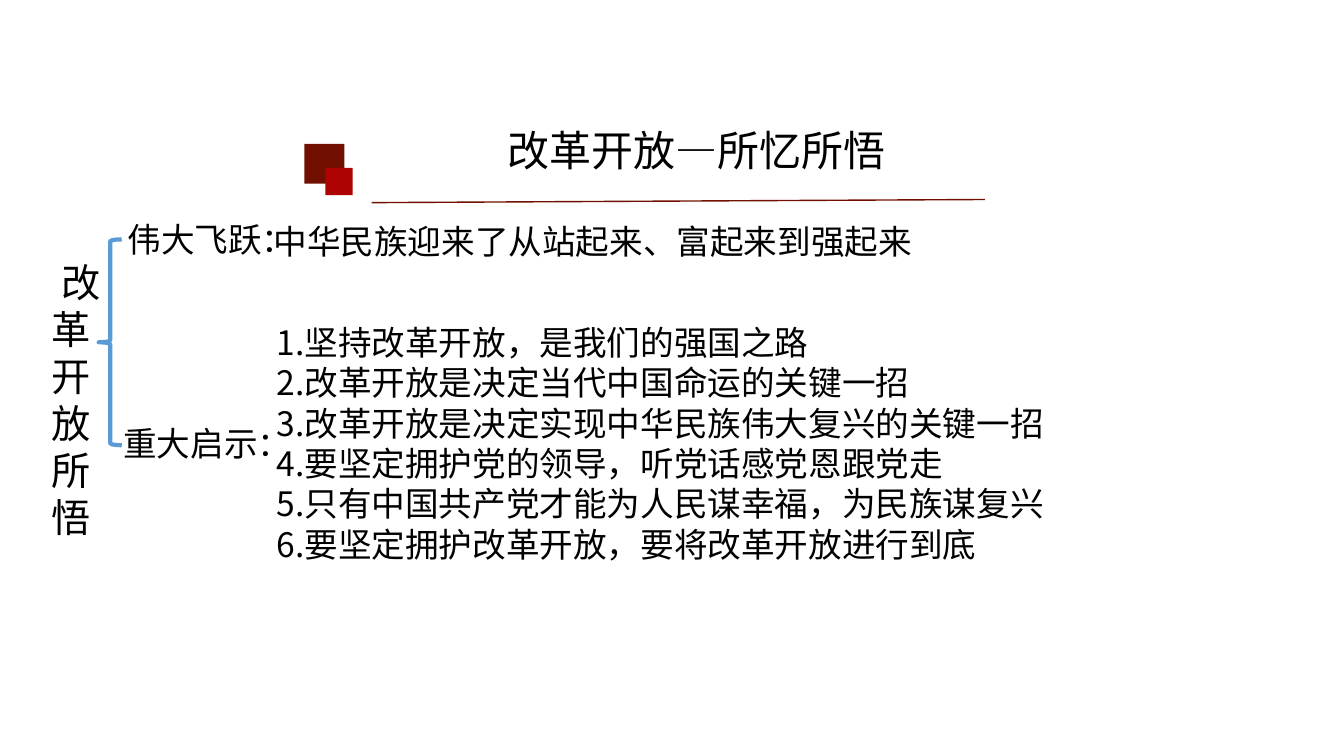
from dataclasses import dataclass

from pptx import Presentation
from pptx import util as u
from pptx.dml.color import RGBColor
from pptx.enum import shapes, text
from pptx.oxml.ns import qn

PX = 9525  # EMU per px, 96 px to the inch


@dataclass(frozen=True)
class Theme:
    font: str = "Noto Sans CJK SC"
    ink: str = "000000"
    maroon: str = "711000"
    red: str = "AE0203"
    blue: str = "5B9BD5"
    title: int = 30
    topic: int = 28
    body: int = 24
    rule: int = 1
    brace: int = 3


THEME = Theme()


def px(*lengths):
    return [u.Emu(length * PX) for length in lengths]


def add_text(slide, box, lines, size=THEME.body, align=text.PP_ALIGN.LEFT, indent=0):
    shape = slide.shapes.add_textbox(*px(*box))
    frame = shape.text_frame
    frame.word_wrap = True
    for index, line in enumerate(lines):
        paragraph = frame.paragraphs[0] if index == 0 else frame.add_paragraph()
        paragraph.alignment = align
        if indent:
            paragraph._p.get_or_add_pPr().set("indent", str(indent * PX))
        run = paragraph.add_run()
        run.text = line
        run.font.size = u.Pt(size)
        run.font.name = THEME.font
        run.font.color.rgb = RGBColor.from_string(THEME.ink)
        # East Asian glyphs take their typeface from a:ea
        east_asian = run._r.get_or_add_rPr().makeelement(
            qn("a:ea"), {"typeface": THEME.font})
        run._r.rPr.find(qn("a:latin")).addnext(east_asian)
    return shape


def add_square(slide, left, top, side, colour):
    shape = slide.shapes.add_shape(
        shapes.MSO_SHAPE.RECTANGLE, *px(left, top, side, side))
    shape.shadow.inherit = False
    shape.fill.solid()
    shape.fill.fore_color.rgb = RGBColor.from_string(colour)
    shape.line.fill.background()
    return shape


def add_brace(slide, box):
    shape = slide.shapes.add_shape(shapes.MSO_SHAPE.LEFT_BRACE, *px(*box))
    shape.shadow.inherit = False
    shape.fill.background()
    shape.line.color.rgb = RGBColor.from_string(THEME.blue)
    shape.line.width = u.Pt(THEME.brace)
    return shape


def add_rule(slide, ends):
    connector = slide.shapes.add_connector(
        shapes.MSO_CONNECTOR.STRAIGHT, *px(*ends))
    connector.line.color.rgb = RGBColor.from_string(THEME.maroon)
    connector.line.width = u.Pt(THEME.rule)
    properties = connector._element.spPr
    properties.append(properties.makeelement(qn("a:effectLst"), {}))
    return connector


def main():
    presentation = Presentation()
    presentation.slide_width, presentation.slide_height = px(1280, 720)
    slide = presentation.slides.add_slide(presentation.slide_layouts[6])

    # Heading with its ornament and rule
    add_rule(slide, (354, 193, 938, 190))
    add_square(slide, 290, 137, 38, THEME.maroon)
    add_square(slide, 310, 160, 26, THEME.red)
    add_text(slide, (371, 114, 584, 59), ["改革开放—所忆所悟"],
             THEME.title, text.PP_ALIGN.CENTER)

    # Topic, one character to a line, and the brace beside it
    add_text(slide, (40, 241, 67, 278), ["改革开放所悟"], THEME.topic, indent=9)
    add_brace(slide, (94, 228, 22, 196))

    # First branch
    add_text(slide, (112, 204, 164, 48), ["伟大飞跃："])
    add_text(slide, (251, 206, 942, 204), ["中华民族迎来了从站起来、富起来到强起来"])

    # Second branch
    add_text(slide, (108, 398, 180, 48), ["重大启示："])
    add_text(slide, (254, 302, 778, 242), [
        "1.坚持改革开放，是我们的强国之路",
        "2.改革开放是决定当代中国命运的关键一招",
        "3.改革开放是决定实现中华民族伟大复兴的关键一招",
        "4.要坚定拥护党的领导，听党话感党恩跟党走",
        "5.只有中国共产党才能为人民谋幸福，为民族谋复兴",
        "6.要坚定拥护改革开放，要将改革开放进行到底",
    ])

    presentation.save("out.pptx")


if __name__ == "__main__":
    main()
